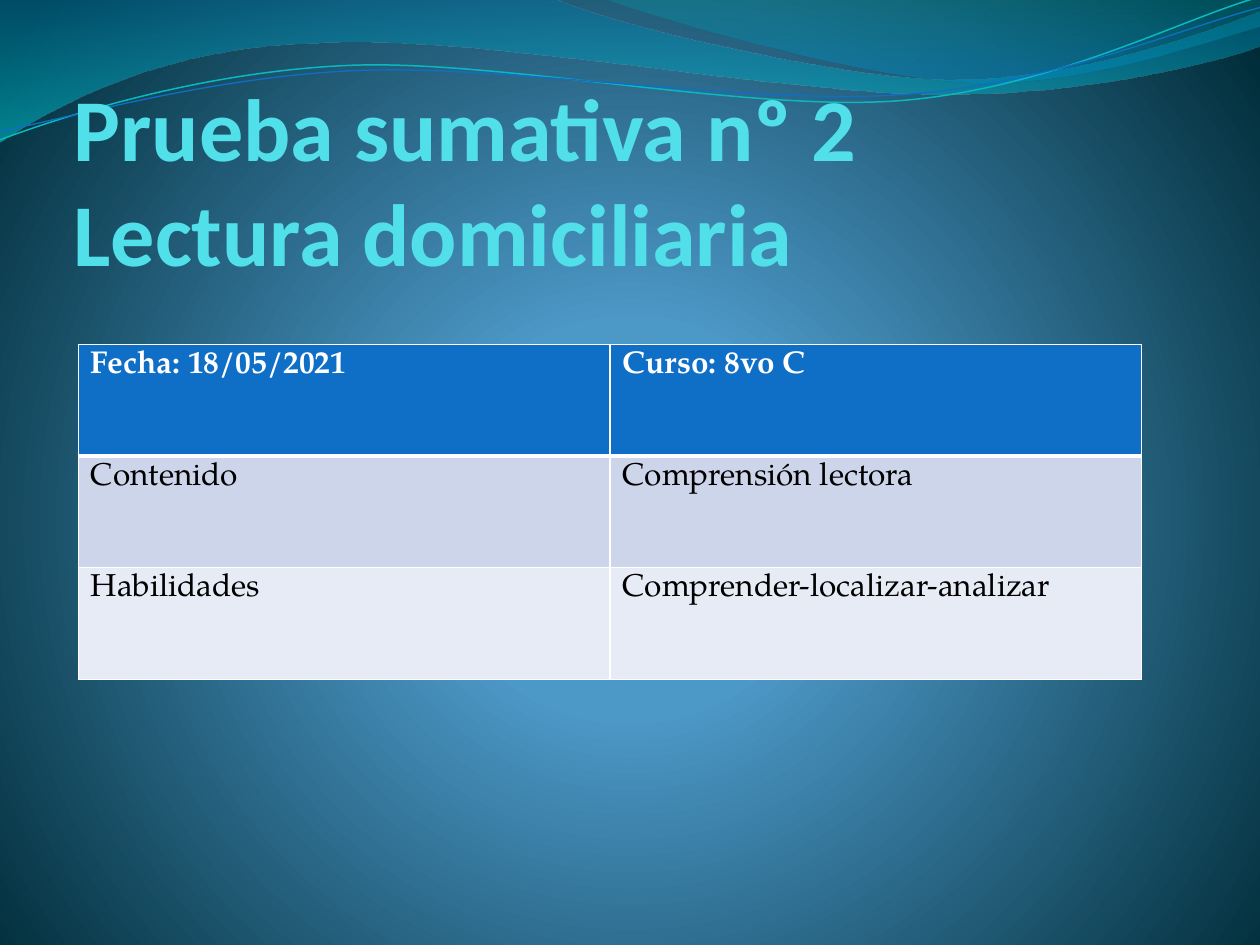
from dataclasses import dataclass

import lxml.etree
import pptx
import pptx.dml.color
import pptx.enum.text
import pptx.oxml
import pptx.oxml.ns
import pptx.util

Pt = pptx.util.Pt
qn = pptx.oxml.ns.qn


@dataclass(frozen=True)
class Theme:
    title_font: str = "Calibri"
    body_font: str = "TeX Gyre Pagella"
    title_size: float = 50.4
    body_size: float = 18
    title: str = "51E0EA"
    header: str = "0F6FC6"
    bands: tuple = ("CCD5EA", "E7EBF5")
    white: str = "FFFFFF"
    black: str = "000000"
    teal_line: str = "0AB8BF"
    blue_line: str = "0F6FC6"
    # Gradient stops: position %, colour, opacity %
    backdrop: tuple = ((0, "4AA0D6", 100), (25, "4C98C7", 100), (100, "002C38", 100))
    long_wave: tuple = ((0, "0074A1", 45), (100, "00C6CF", 55))
    corner_wave: tuple = ((0, "00A1A9", 30), (80, "008BBF", 45))


DOWNWARD = '<a:lin ang="5400000" scaled="0"/>'
RADIAL = ('<a:path path="circle"><a:fillToRect l="10000" t="110000" '
          'r="10000" b="100000"/></a:path>')


def rgb(colour):
    return pptx.dml.color.RGBColor.from_string(colour)


def gradient(stops, direction):
    marks = "".join(
        f'<a:gs pos="{pos * 1000}"><a:srgbClr val="{colour}">'
        f'<a:alpha val="{opacity * 1000}"/></a:srgbClr></a:gs>'
        for pos, colour, opacity in stops)
    return pptx.oxml.parse_xml(
        f'<a:gradFill {pptx.oxml.ns.nsdecls("a")} rotWithShape="1">'
        f"<a:gsLst>{marks}</a:gsLst>{direction}</a:gradFill>")


class SlideBuilder:
    def __init__(self, slide, theme):
        self.slide = slide
        self.theme = theme

    def background(self, stops):
        self.slide.background.fill.solid()
        properties = self.slide.element.find(".//" + qn("p:bgPr"))
        properties.replace(properties.find(qn("a:solidFill")), gradient(stops, RADIAL))

    def curve(self, start, segments, closed):
        """A segment has one point (straight line) or three (Bézier curve)."""
        points = [(Pt(x), Pt(y)) for segment in segments for x, y in segment]
        builder = self.slide.shapes.build_freeform(Pt(start[0]), Pt(start[1]), scale=1.0)
        builder.add_line_segments(points, close=closed)
        shape = builder.convert_to_shape()
        shape.shadow.inherit = False

        # Join each three straight steps of a Bézier segment into one curve
        steps = iter(list(shape.element.iter(qn("a:lnTo"))))
        for segment in segments:
            group = [next(steps) for _ in segment]
            if len(group) == 3:
                bezier = lxml.etree.Element(qn("a:cubicBezTo"))
                group[0].addprevious(bezier)
                for step in group:
                    bezier.append(step[0])
                    step.getparent().remove(step)
        return shape

    def wave(self, start, segments, stops):
        shape = self.curve(start, segments, True)
        shape.line.fill.background()
        shape.fill.solid()
        properties = shape.element.spPr
        properties.replace(properties.find(qn("a:solidFill")), gradient(stops, DOWNWARD))

    def ripple(self, start, segments, colour, width):
        shape = self.curve(start, segments, False)
        shape.fill.background()
        shape.line.color.rgb = rgb(colour)
        shape.line.width = Pt(width)

    def style(self, paragraph, font, size, colour, bold):
        for run in paragraph.runs:
            run.font.name = font
            run.font.size = Pt(size)
            run.font.bold = bold
            run.font.color.rgb = rgb(colour)

    def title(self, text, left, top, width, height):
        frame = self.slide.shapes.add_textbox(
            Pt(left), Pt(top), Pt(width), Pt(height)).text_frame
        frame.word_wrap = True
        frame.vertical_anchor = pptx.enum.text.MSO_ANCHOR.BOTTOM
        frame.margin_left = frame.margin_top = frame.margin_bottom = 0
        frame.margin_right = Pt(1.4)
        paragraph = frame.paragraphs[0]
        paragraph.text = text
        self.style(paragraph, self.theme.title_font, self.theme.title_size,
                   self.theme.title, True)

    def borders(self, cell, widths):
        properties = cell._tc.get_or_add_tcPr()
        for index, (side, width) in enumerate(widths.items()):
            line = lxml.etree.Element(qn(f"a:ln{side}"), w=str(Pt(width)))
            fill = lxml.etree.SubElement(line, qn("a:solidFill"))
            lxml.etree.SubElement(fill, qn("a:srgbClr"), val=self.theme.white)
            properties.insert(index, line)

    def table(self, rows, left, top, width, height):
        table = self.slide.shapes.add_table(
            len(rows), len(rows[0]), Pt(left), Pt(top), Pt(width), Pt(height)).table
        for r, row in enumerate(rows):
            header = r == 0
            fill = self.theme.header if header else self.theme.bands[(r - 1) % 2]
            ink = self.theme.white if header else self.theme.black
            edges = {"L": 1, "R": 1, "T": 3 if r == 1 else 1, "B": 3 if header else 1}
            for c, text in enumerate(row):
                cell = table.cell(r, c)
                cell.fill.solid()
                cell.fill.fore_color.rgb = rgb(fill)
                self.borders(cell, edges)
                cell.text_frame.text = text
                self.style(cell.text_frame.paragraphs[0], self.theme.body_font,
                           self.theme.body_size, ink, header)


def main():
    theme = Theme()
    presentation = pptx.Presentation()
    presentation.slide_width, presentation.slide_height = Pt(720), Pt(540)
    slide = presentation.slides.add_slide(presentation.slide_layouts[6])
    builder = SlideBuilder(slide, theme)

    # Background and waves along the top
    builder.background(theme.backdrop)
    builder.wave((0, 0), [
        [(316.8, -0.7)],
        [(342.7, 12.2), (478.1, 45.4), (545.8, 45.4)],
        [(614.2, 45.4), (689.8, 18.7), (720, 6.5)],
        [(720.7, 25.9)],
        [(707.8, 31.7), (626.4, 54.7), (537.1, 54)],
        [(447.8, 54), (275, 20.2), (185, 24.5)],
        [(92.9, 25.9), (33.1, 59.8), (-0.7, 81.4)],
        [(0, 0)],
    ], theme.long_wave)
    builder.wave((344.9, -0.7), [
        [(366.5, 7.9), (491, 44.6), (553.7, 46.8)],
        [(616.3, 49.7), (691.9, 23), (720, 15.1)],
        [(720, 0)],
        [(344.9, -0.7)],
    ], theme.corner_wave)

    # Thin ripples
    builder.ripple((0, 79.9), [
        [(34.6, 67), (113.8, 41), (199.4, 37.4)],
        [(284.4, 33.8), (427, 64.1), (513.4, 57.6)],
        [(599.8, 51.1), (675.4, 10.8), (718.6, -1.4)],
    ], theme.teal_line, 0.85)
    builder.ripple((0, 74.9), [
        [(33.8, 69.1), (118.1, 43.9), (203.8, 40.3)],
        [(290.2, 36.7), (429.8, 60.5), (516.2, 54)],
        [(601.9, 48.2), (677.5, 15.1), (720, 4.3)],
    ], theme.blue_line, 0.75)

    # Title
    builder.title("Prueba sumativa nº 2\nLectura domiciliaria", 42, 44.6, 618.5, 118)

    # Test details
    builder.table([
        ("Fecha: 18/05/2021", "Curso: 8vo C"),
        ("Contenido", "Comprensión lectora"),
        ("Habilidades", "Comprender-localizar-analizar"),
    ], 44.8, 196.8, 607.6, 191.4)

    presentation.save("out.pptx")


if __name__ == "__main__":
    main()
